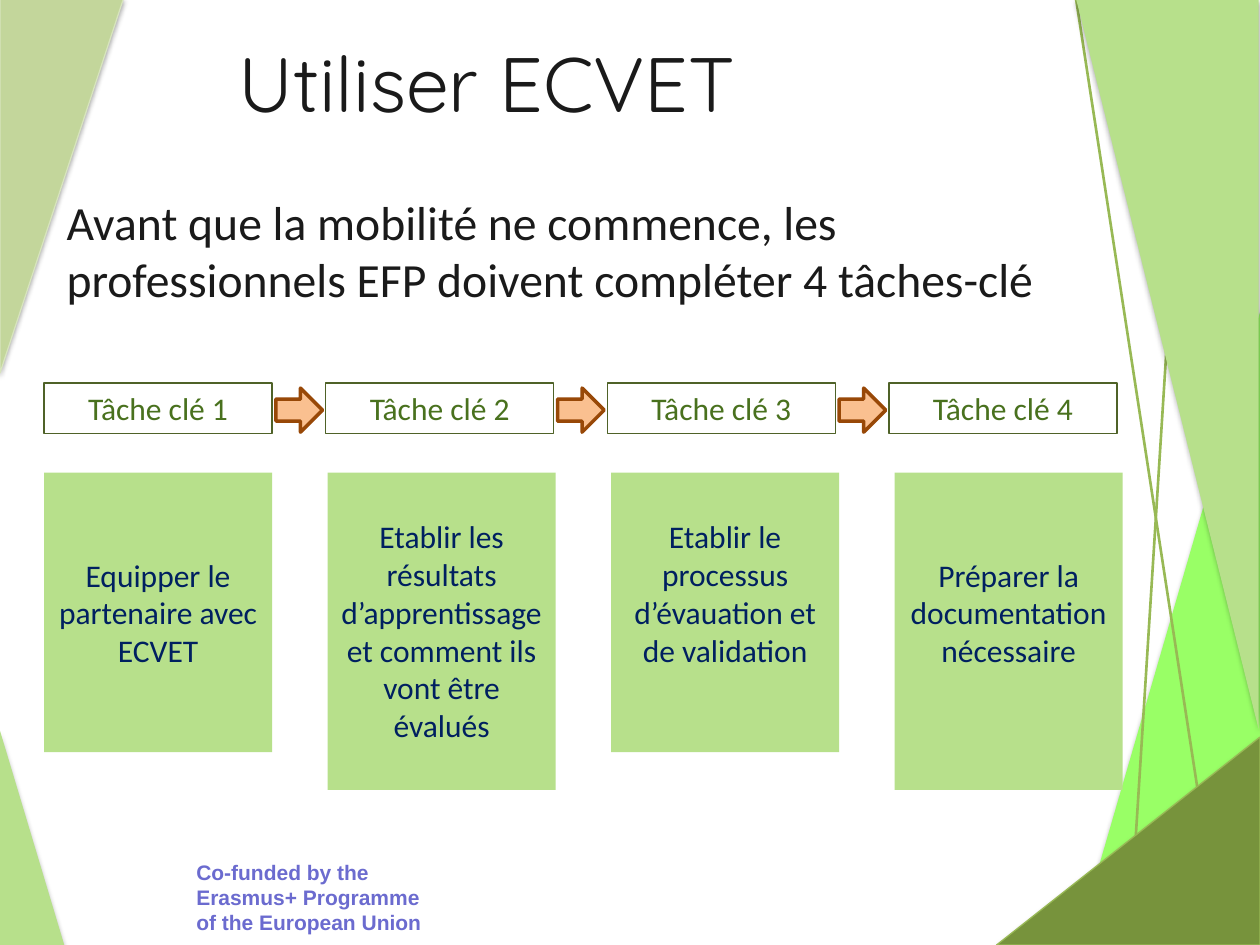
"""Build the slide on the four key tasks that come before an ECVET mobility."""
import dataclasses

import lxml.etree
import pptx
import pptx.dml.color
import pptx.enum.shapes
import pptx.enum.text
import pptx.oxml.ns
import pptx.util

Inches = pptx.util.Inches
Pt = pptx.util.Pt
Shape = pptx.enum.shapes.MSO_SHAPE
Align = pptx.enum.text.PP_ALIGN
Anchor = pptx.enum.text.MSO_ANCHOR
qn = pptx.oxml.ns.qn


@dataclasses.dataclass(frozen=True)
class Theme:
    """Colours, fonts and type sizes of the slide."""
    ink: str = "1A1A1A"
    navy: str = "002060"
    forest: str = "49711E"
    label_line: str = "4F6228"
    leaf: str = "B7E08B"
    lime: str = "99FF66"
    sage: str = "C3D69B"
    pale_sage: str = "D7E4BD"
    olive: str = "77933C"
    stem: str = "98B955"
    peach: str = "FAC090"
    rust: str = "984807"
    violet: str = "6B6BCF"
    black: str = "000000"
    heading_font: str = "Quicksand"
    body_font: str = "Calibri"
    funding_font: str = "Arial"
    heading_size: float = 44
    intro_size: float = 27.2
    task_size: float = 18
    funding_size: float = 12


THEME = Theme()
TASK_LEFT, TASK_WIDTH = 0.35, 1.81
LABEL_TOP, LABEL_HEIGHT, LABEL_PITCH = 3.04, 0.4, 2.235
CARD_TOP, CARD_PITCH = 3.75, 2.25
ARROW_LEFT, ARROW_TOP, ARROW_WIDTH, ARROW_HEIGHT = 2.19, 3.08, 0.37, 0.35
TEXT_INSET, TASK_LINE = 0.05, 0.305

TASKS = [
    ("Equipper le partenaire avec ECVET", 2.22, 2),
    ("Etablir les résultats d’apprentissage et comment ils vont être évalués", 2.52, 1),
    ("Etablir le processus d’évauation et de validation", 2.22, 1),
    ("Préparer la documentation nécessaire", 2.52, 2),
]

TRIANGLES_BEHIND = [
    ((8.54, 2.41, 1.48, 5.09), ["flipH"], THEME.lime, None, 38),
    ((0, 5.8, 0.51, 1.7), [], THEME.leaf, None, 35),
    ((0, -0.01, 0.98, 2.97), ["flipV"], THEME.sage, THEME.pale_sage, 35),
]
TRIANGLES_FRONT = [
    ((8.54, -0.01, 1.45, 5.8), ["flipH", "flipV"], THEME.leaf, None, 35),
    ((7.91, 5.85, 2.09, 1.65), ["flipH"], THEME.olive, THEME.stem, 35),
]
STEMS = [((8.96, 7.5), (9.3, 2.1)), ((9.65, 7.21), (8.54, -0.01))]


def rgb(colour):
    """Return a colour value for a hex string."""
    return pptx.dml.color.RGBColor.from_string(colour)


def apply_formats(target, formats):
    """Set each named attribute of the target."""
    for name, value in formats.items():
        setattr(target, name, value)


def write_text(box, wording, font, size, colour, align=Align.LEFT, anchor=Anchor.TOP,
               bold=False, top_inset=TEXT_INSET):
    """Write one wrapped paragraph into a box."""
    apply_formats(box.text_frame, {
        "word_wrap": True, "vertical_anchor": anchor, "margin_top": Inches(top_inset)})
    paragraph = box.text_frame.paragraphs[0]
    paragraph.alignment = align
    run = paragraph.add_run()
    run.text = wording
    apply_formats(run.font, {"name": font, "size": Pt(size), "bold": bold})
    run.font.color.rgb = rgb(colour)


def add_text(slide, place, wording, font, size, colour, **options):
    """Add a free text box."""
    box = slide.shapes.add_textbox(*map(Inches, place))
    write_text(box, wording, font, size, colour, **options)


def add_block(slide, kind, place, fill=None, line=None, line_width=0.75):
    """Add a preset shape with a plain fill and outline."""
    block = slide.shapes.add_shape(kind, *map(Inches, place))
    block.shadow.inherit = False
    if fill:
        block.fill.solid()
        block.fill.fore_color.rgb = rgb(fill)
    else:
        block.fill.background()
    if line:
        block.line.color.rgb = rgb(line)
        block.line.width = Pt(line_width)
    else:
        block.line.fill.background()
    return block


def add_triangle(slide, place, flips, fill, line, shadow_opacity):
    """Add a decorative corner triangle with a soft shadow below."""
    triangle = add_block(slide, Shape.RIGHT_TRIANGLE, place, fill, line)
    properties = triangle._element.spPr
    for flip in flips:
        properties.find(qn("a:xfrm")).set(flip, "1")
    shadow = lxml.etree.SubElement(
        properties.find(qn("a:effectLst")), qn("a:outerShdw"),
        blurRad=str(Pt(3.1)), dist=str(Pt(1.7)), dir="5400000", rotWithShape="0")
    tint = lxml.etree.SubElement(shadow, qn("a:srgbClr"), val=THEME.black)
    lxml.etree.SubElement(tint, qn("a:alpha"), val=str(shadow_opacity * 1000))


def add_stem(slide, start, end):
    """Add a thin decorative line."""
    stem = slide.shapes.add_connector(
        pptx.enum.shapes.MSO_CONNECTOR.STRAIGHT, *map(Inches, start + end))
    stem.line.color.rgb = rgb(THEME.stem)
    stem.line.width = Pt(1.5)
    lxml.etree.SubElement(stem._element.spPr, qn("a:effectLst"))


def add_task_label(slide, index):
    """Add the outlined label of a key task."""
    label = add_block(
        slide, Shape.RECTANGLE,
        (TASK_LEFT + index * LABEL_PITCH, LABEL_TOP, TASK_WIDTH, LABEL_HEIGHT),
        line=THEME.label_line)
    write_text(label, f"Tâche clé {index + 1}", THEME.body_font, THEME.task_size,
               THEME.forest, align=Align.CENTER)


def add_task_card(slide, index, wording, height, lines_above):
    """Add the filled card that explains a key task."""
    card = add_block(
        slide, Shape.RECTANGLE,
        (TASK_LEFT + index * CARD_PITCH, CARD_TOP, TASK_WIDTH, height), THEME.leaf)
    write_text(card, wording, THEME.body_font, THEME.task_size, THEME.navy,
               align=Align.CENTER, top_inset=TEXT_INSET + lines_above * TASK_LINE)


def main():
    """Build the slide and save it."""
    deck = pptx.Presentation()
    apply_formats(deck, {"slide_width": Inches(10), "slide_height": Inches(7.5)})
    slide = deck.slides.add_slide(deck.slide_layouts[6])

    for triangle in TRIANGLES_BEHIND:
        add_triangle(slide, *triangle)
    for start, end in STEMS:
        add_stem(slide, start, end)
    for triangle in TRIANGLES_FRONT:
        add_triangle(slide, *triangle)

    add_text(slide, (1.46, 6.77, 2, 0.71),
             "Co-funded by the Erasmus+ Programme of the European Union",
             THEME.funding_font, THEME.funding_size, THEME.violet, bold=True)
    add_text(slide, (0.63, 0.02, 6.47, 1.25), "Utiliser ECVET", THEME.heading_font,
             THEME.heading_size, THEME.ink, align=Align.CENTER, anchor=Anchor.MIDDLE)
    add_text(slide, (0.43, 1.48, 8.36, 1.3),
             "Avant que la mobilité ne commence, les professionnels EFP doivent "
             "compléter 4 tâches-clé",
             THEME.body_font, THEME.intro_size, THEME.ink)

    for index in range(len(TASKS)):
        add_task_label(slide, index)
    for index, task in enumerate(TASKS):
        add_task_card(slide, index, *task)
    for index in range(len(TASKS) - 1):
        add_block(slide, Shape.RIGHT_ARROW,
                  (ARROW_LEFT + index * LABEL_PITCH, ARROW_TOP, ARROW_WIDTH, ARROW_HEIGHT),
                  THEME.peach, THEME.rust, 2)

    deck.save("out.pptx")


if __name__ == "__main__":
    main()
